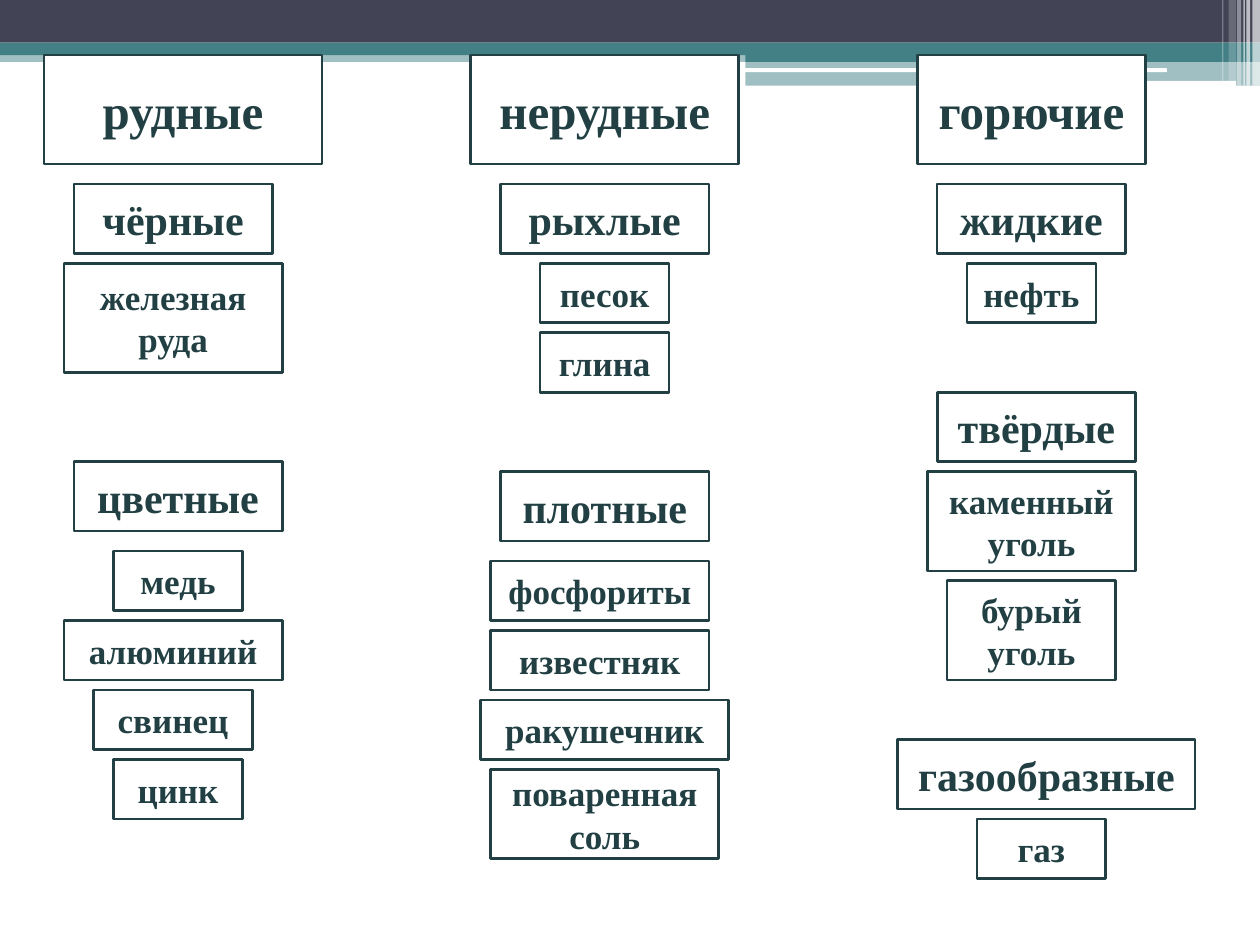
"""Build a slide that classifies minerals into ore, non-ore and fuel groups."""
from typing import NamedTuple

import pptx
import pptx.dml.color
import pptx.enum.shapes
import pptx.enum.text
import pptx.oxml
import pptx.oxml.ns
import pptx.util

Pt = pptx.util.Pt
SHAPES = pptx.enum.shapes.MSO_SHAPE
COLORS = {"white": "FFFFFF", "slate": "424456", "teal": "438086", "ink": "224043"}
FONT = "Times New Roman"
GRID = 5.67
CHART_TOP = 31.4


class Band(NamedTuple):
    left: float
    top: float
    width: float
    height: float
    color: str
    opacity: int = 100
    rounded: bool = False


class Box(NamedTuple):
    """A label whose place and size are counted in grid units from its column's corner."""
    text: str
    column: int
    row: int
    width: int
    height: int = 6
    size: int = 20


class Column(NamedTuple):
    left: float
    boxes: list[Box]


def group(text: str, width: int) -> Box:
    return Box(text, 0, 0, width, 11, 28)


def kind(text: str, column: int, row: int, width: int) -> Box:
    return Box(text, column, row, width, 7, 24)


BANDS = [
    Band(0, 28.8, 720, 6.6, "teal", 50),
    Band(0, 0, 720, 24.4, "slate"),
    Band(0, 24.4, 720, 7.2, "teal"),
    Band(426, 28.2, 294, 7.2, "teal"),
    Band(426, 35, 294, 14, "teal", 50),
    Band(425.6, 39, 241.2, 2.2, "white", rounded=True),
    Band(580.4, 46.2, 126, 2.8, "white", rounded=True),
    Band(715.6, 0, 4.4, 49, "white", 65),
    Band(712.2, 0, 2.2, 49, "white", 65),
    Band(710.6, 0, 0.8, 49, "white", 60),
    Band(707, 0, 2.2, 49, "white", 40),
    Band(702, 0, 4.4, 46.2, "white", 20),
    Band(698.4, 0, 0.8, 46.2, "white", 30),
]

COLUMNS = [
    Column(25.2, [
        group("рудные", 28),
        kind("чёрные", 3, 13, 20),
        Box("железная руда", 2, 21, 22, 11),
        kind("цветные", 3, 41, 21),
        Box("медь", 7, 50, 13),
        Box("алюминий", 2, 57, 22),
        Box("свинец", 5, 64, 16),
        Box("цинк", 7, 71, 13),
    ]),
    Column(269, [
        group("нерудные", 27),
        kind("рыхлые", 3, 13, 21),
        Box("песок", 7, 21, 13),
        Box("глина", 7, 28, 13),
        kind("плотные", 3, 42, 21),
        Box("фосфориты", 2, 51, 22),
        Box("известняк", 2, 58, 22),
        Box("ракушечник", 1, 65, 25),
        Box("поваренная соль", 2, 72, 23, 9),
    ]),
    Column(524.2, [
        group("горючие", 23),
        kind("жидкие", 2, 13, 19),
        Box("нефть", 5, 21, 13),
        kind("твёрдые", 2, 34, 20),
        Box("каменный уголь", 1, 42, 21, 10),
        Box("бурый уголь", 3, 53, 17, 10),
        kind("газообразные", -2, 69, 30),
        Box("газ", 6, 77, 13),
    ]),
]


def rgb(name: str) -> pptx.dml.color.RGBColor:
    return pptx.dml.color.RGBColor.from_string(COLORS[name])


def draw_shape(slide, preset, left: float, top: float, width: float, height: float, color: str):
    shape = slide.shapes.add_shape(preset, Pt(left), Pt(top), Pt(width), Pt(height))
    shape.shadow.inherit = False
    shape.fill.solid()
    shape.fill.fore_color.rgb = rgb(color)
    return shape


def draw_band(slide, band: Band) -> None:
    preset = SHAPES.ROUNDED_RECTANGLE if band.rounded else SHAPES.RECTANGLE
    shape = draw_shape(slide, preset, band.left, band.top, band.width, band.height, band.color)
    shape.line.fill.background()
    if band.opacity < 100:
        color = shape.fill._xPr.find(".//" + pptx.oxml.ns.qn("a:srgbClr"))
        alpha = pptx.oxml.parse_xml(
            f'<a:alpha {pptx.oxml.ns.nsdecls("a")} val="{band.opacity * 1000}"/>')
        color.append(alpha)


def draw_box(slide, origin: float, box: Box) -> None:
    shape = draw_shape(slide, SHAPES.RECTANGLE, origin + box.column * GRID,
                       CHART_TOP + box.row * GRID, box.width * GRID, box.height * GRID, "white")
    shape.line.color.rgb = rgb("ink")
    shape.line.width = Pt(1.5)
    frame = shape.text_frame
    frame.word_wrap = True
    frame.vertical_anchor = pptx.enum.text.MSO_ANCHOR.MIDDLE
    paragraph = frame.paragraphs[0]
    paragraph.alignment = pptx.enum.text.PP_ALIGN.CENTER
    run = paragraph.add_run()
    run.text = box.text
    run.font.name = FONT
    run.font.size = Pt(box.size)
    run.font.bold = True
    run.font.color.rgb = rgb("ink")


def main() -> None:
    presentation = pptx.Presentation()
    presentation.slide_width, presentation.slide_height = Pt(720), Pt(540)
    slide = presentation.slides.add_slide(presentation.slide_layouts.get_by_name("Blank"))
    for band in BANDS:
        draw_band(slide, band)
    for column in COLUMNS:
        for box in column.boxes:
            draw_box(slide, column.left, box)
    presentation.save("out.pptx")


if __name__ == "__main__":
    main()
